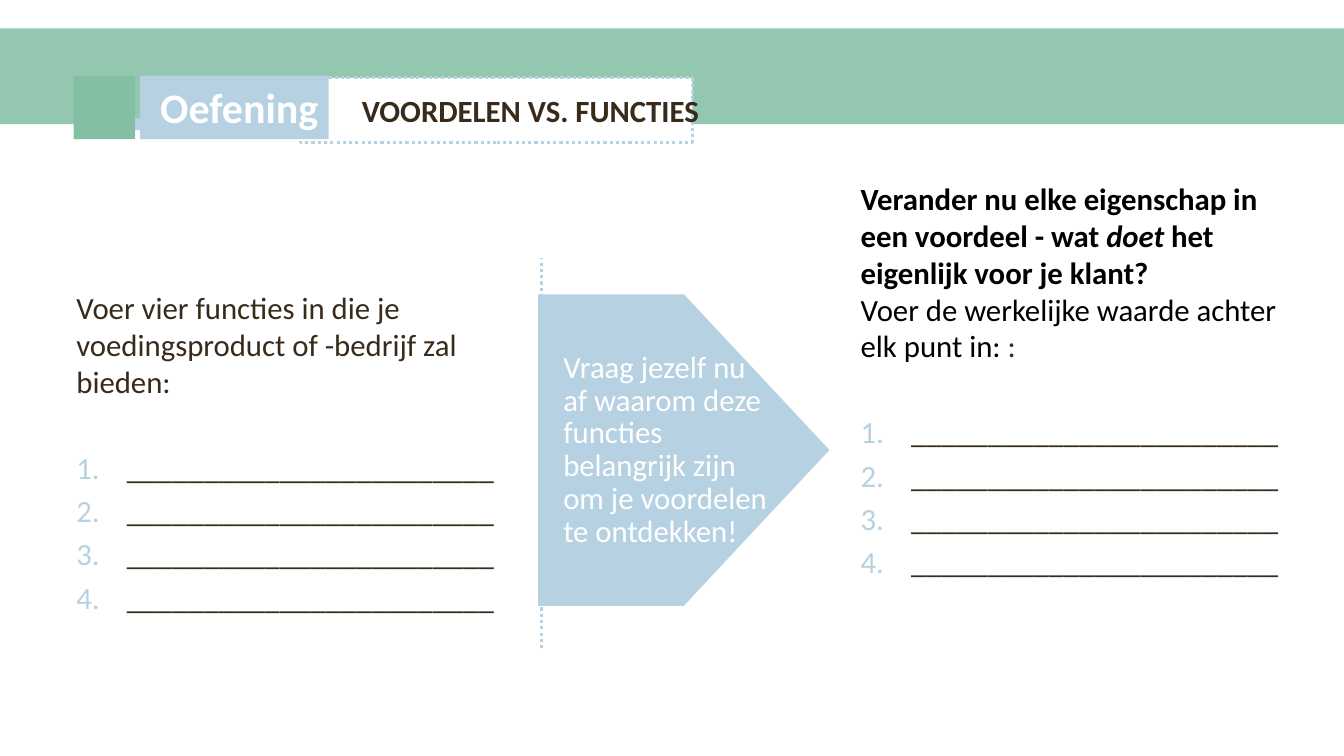
from lxml import etree
from pptx import Presentation
from pptx.dml.color import RGBColor
from pptx.enum.dml import MSO_LINE
from pptx.enum.shapes import MSO_CONNECTOR, MSO_SHAPE
from pptx.enum.text import MSO_ANCHOR, PP_ALIGN
from pptx.oxml.ns import qn
from pptx.util import Pt

RECTANGLE, PENTAGON = MSO_SHAPE.RECTANGLE, MSO_SHAPE.PENTAGON
STRAIGHT = MSO_CONNECTOR.STRAIGHT
DOTTED = MSO_LINE.ROUND_DOT
TOP, BOTTOM = MSO_ANCHOR.TOP, MSO_ANCHOR.BOTTOM
LEFT = PP_ALIGN.LEFT
BLUE, BAND_GREEN, GREEN = "B6D1E1", "94C7B0", "84BFA4"
WHITE, BLACK, BROWN = "FFFFFF", "000000", "382B1B"


def color(hex_value):
    return RGBColor.from_string(hex_value)


def write(paragraph, text, size=22, ink=BROWN, bold=False, italic=False, spacing=None):
    paragraph.alignment = LEFT
    if spacing:
        paragraph.line_spacing = spacing
    run = paragraph.add_run()
    run.text = text
    run.font.name = "Calibri"
    run.font.size = Pt(size)
    run.font.bold = bold
    run.font.italic = italic
    run.font.color.rgb = color(ink)


prs = Presentation()
prs.slide_width, prs.slide_height = Pt(960), Pt(540)
slide = prs.slides.add_slide(prs.slide_layouts[5])
shapes = slide.shapes

divider = shapes.add_connector(STRAIGHT, Pt(386.6), Pt(463), Pt(386.6), Pt(184.3))
divider.line.color.rgb = color(BLUE)
divider.line.width = Pt(2.25)
divider.line.dash_style = DOTTED
etree.SubElement(divider.element.spPr, qn("a:effectLst"))

for preset, left, top, width, height, fill, dotted in [
    (RECTANGLE, 0, 20.2, 960, 68.4, BAND_GREEN, False),
    (RECTANGLE, 61.2, 84.4, 132.5, 8.6, BLUE, False),
    (RECTANGLE, 214.6, 55.6, 280, 46, WHITE, True),
    (RECTANGLE, 100, 54, 134.8, 45.4, BLUE, False),
    (RECTANGLE, 52.6, 54, 43.9, 45.4, GREEN, False),
    (PENTAGON, 384.5, 210.2, 208, 222.5, BLUE, False),
]:
    panel = shapes.add_shape(preset, Pt(left), Pt(top), Pt(width), Pt(height))
    panel.shadow.inherit = False
    panel.fill.solid()
    panel.fill.fore_color.rgb = color(fill)
    if dotted:
        panel.line.color.rgb = color(BLUE)
        panel.line.width = Pt(2.25)
        panel.line.dash_style = DOTTED
    else:
        panel.line.fill.background()

title = shapes.title
title.left, title.top, title.width, title.height = Pt(251.3), Pt(64.8), Pt(430), Pt(33)
title.element.getparent().append(title.element)
title.text_frame.vertical_anchor = TOP
write(title.text_frame.paragraphs[0], "VOORDELEN VS. FUNCTIES", bold=True, spacing=Pt(23.4))

frames = []
for left, top, width, height in [
    (107.3, 67.7, 165, 30.2),
    (395.3, 247.7, 163.4, 146.9),
    (47.5, 203, 324, 270.7),
    (607.7, 124.6, 324, 308.2),
]:
    frame = shapes.add_textbox(Pt(left), Pt(top), Pt(width), Pt(height)).text_frame
    frame.word_wrap = True
    frames.append(frame)
label, question, features, benefits = frames

label.vertical_anchor = BOTTOM
write(label.paragraphs[0], "Oefening", size=30, ink=WHITE, bold=True, spacing=1.5)
write(
    question.paragraphs[0],
    "Vraag jezelf nu af waarom deze functies belangrijk zijn om je voordelen te ontdekken!",
    ink=WHITE,
    spacing=Pt(23.4),
)
write(
    features.paragraphs[0],
    "Voer vier functies in die je voedingsproduct of -bedrijf zal bieden:",
)

instruction = benefits.paragraphs[0]
write(instruction, "Verander nu elke eigenschap in een voordeel - wat ", ink=BLACK, bold=True)
write(instruction, "doet", ink=BLACK, bold=True, italic=True)
write(instruction, " het eigenlijk voor je klant?", ink=BLACK, bold=True)
instruction.add_line_break()
write(instruction, "Voer de werkelijke waarde achter elk punt in: ", ink=BLACK)
write(instruction, ":")

for answers in (features, benefits):
    for number in range(4):
        answer = answers.add_paragraph()
        properties = answer._p.get_or_add_pPr()
        properties.set("marL", str(Pt(36)))
        properties.set("indent", str(-Pt(36)))
        bullet_color = etree.SubElement(properties, qn("a:buClr"))
        etree.SubElement(bullet_color, qn("a:srgbClr"), val=BLUE)
        etree.SubElement(properties, qn("a:buAutoNum"), type="arabicPeriod")
        answer.space_before = Pt(4.4 if number else 35)
        write(answer, "_" * 24)

prs.save("out.pptx")
